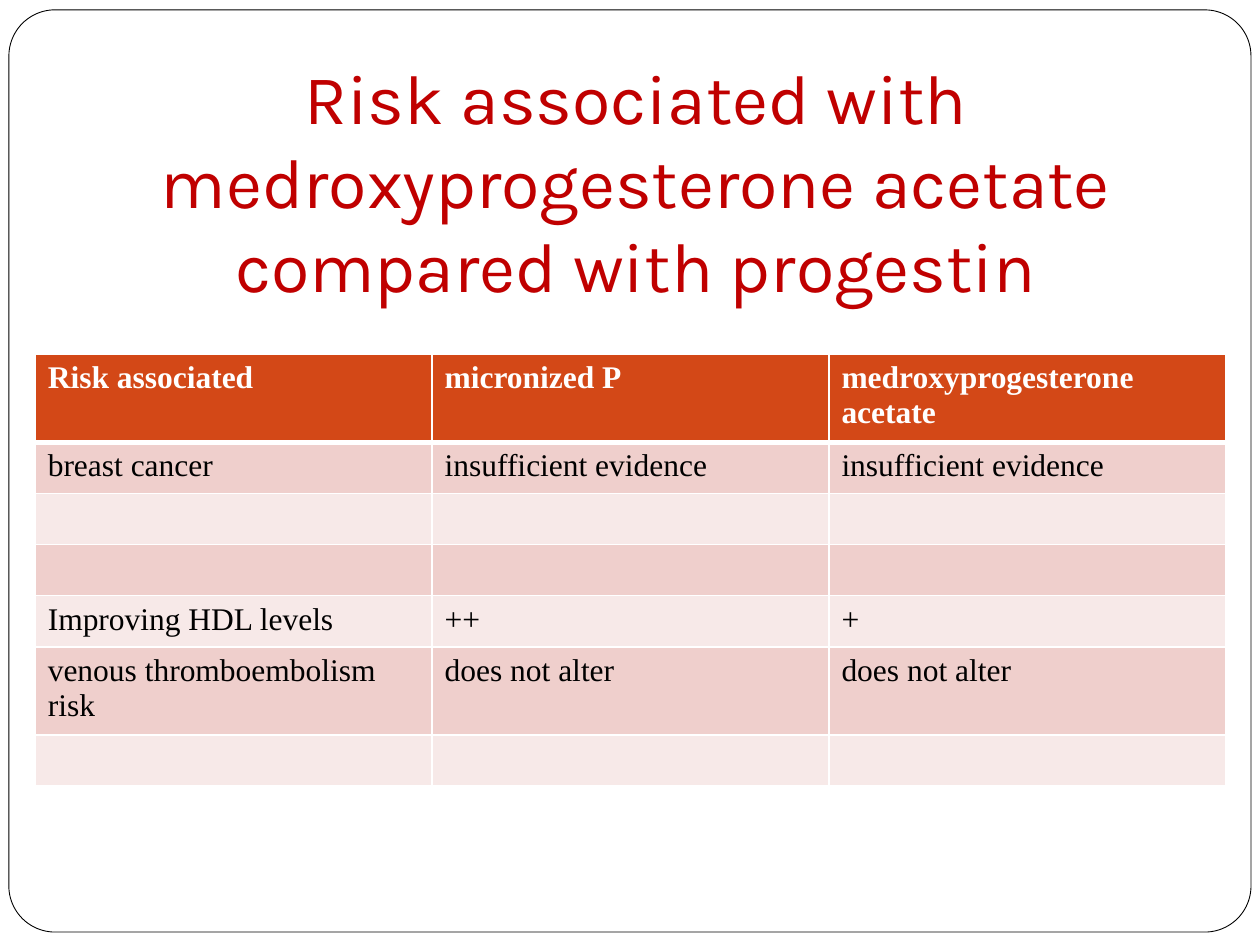
import pptx
import pptx.dml.color
import pptx.enum.shapes
import pptx.enum.text
import pptx.oxml.ns
import pptx.util
import lxml.etree
from dataclasses import dataclass

Cm = pptx.util.Cm
Pt = pptx.util.Pt
RGB = pptx.dml.color.RGBColor.from_string


@dataclass(frozen=True)
class Theme:
    paper: str = "FFFFFF"
    ink: str = "000000"
    title: str = "C00000"
    header: str = "D34817"
    bands: tuple = ("EFCFCC", "F7E9E8")
    title_font: str = "Karla"
    table_font: str = "Times New Roman"
    title_size: int = 40
    table_size: int = 18


theme = Theme()


def add_span(para, text, font, size, color, bold=False):
    span = para.add_run()
    span.text = text
    span.font.name = font
    span.font.size = Pt(size)
    span.font.bold = bold
    span.font.color.rgb = RGB(color)


def add_border(cell, side, width):
    qn = pptx.oxml.ns.qn
    properties = cell._tc.get_or_add_tcPr()
    line = lxml.etree.SubElement(properties, qn(f"a:ln{side}"), w=str(Pt(width)))
    fill = lxml.etree.SubElement(line, qn("a:solidFill"))
    lxml.etree.SubElement(fill, qn("a:srgbClr"), val=theme.paper)


deck = pptx.Presentation()
deck.slide_width = Cm(25.4)
deck.slide_height = Cm(19.05)
page = deck.slides.add_slide(deck.slide_layouts[6])

# Rounded frame around the page
frame = page.shapes.add_shape(
    pptx.enum.shapes.MSO_SHAPE.ROUNDED_RECTANGLE,
    Cm(0.18), Cm(0.2), Cm(25.04), Cm(18.59))
frame.adjustments[0] = 0.05
frame.shadow.inherit = False
frame.fill.solid()
frame.fill.fore_color.rgb = RGB(theme.paper)
frame.line.color.rgb = RGB(theme.ink)
frame.line.width = Pt(0.5)

# Title
title_box = page.shapes.add_textbox(Cm(0.71), Cm(0.33), Cm(24.2), Cm(6.1))
title = title_box.text_frame
title.word_wrap = True
title.vertical_anchor = pptx.enum.text.MSO_ANCHOR.BOTTOM
title.margin_bottom = Cm(0.25)
para = title.paragraphs[0]
para.alignment = pptx.enum.text.PP_ALIGN.CENTER
add_span(para, "Risk associated with medroxyprogesterone acetate compared with progestin",
         theme.title_font, theme.title_size, theme.title)

# Risk table
risks = [
    ("Risk associated", "micronized P", "medroxyprogesterone acetate"),
    ("breast cancer", "insufficient evidence", "insufficient evidence"),
    ("", "", ""),
    ("", "", ""),
    ("Improving HDL levels", "++", "+"),
    ("venous thromboembolism risk", "does not alter", "does not alter"),
    ("", "", ""),
]
row_height = Cm(1.03)
table = page.shapes.add_table(
    len(risks), len(risks[0]), Cm(0.71), Cm(7.14),
    Cm(24), row_height * len(risks)).table

for row, texts in enumerate(risks):
    is_header = row == 0
    for column, text in enumerate(texts):
        cell = table.cell(row, column)
        for side in "LRTB":
            under_header = (is_header and side == "B") or (row == 1 and side == "T")
            add_border(cell, side, 3 if under_header else 1)
        cell.fill.solid()
        cell.fill.fore_color.rgb = RGB(
            theme.header if is_header else theme.bands[(row - 1) % 2])
        if text:
            add_span(cell.text_frame.paragraphs[0], text,
                     theme.table_font, theme.table_size,
                     theme.paper if is_header else theme.ink, is_header)

deck.save("out.pptx")
